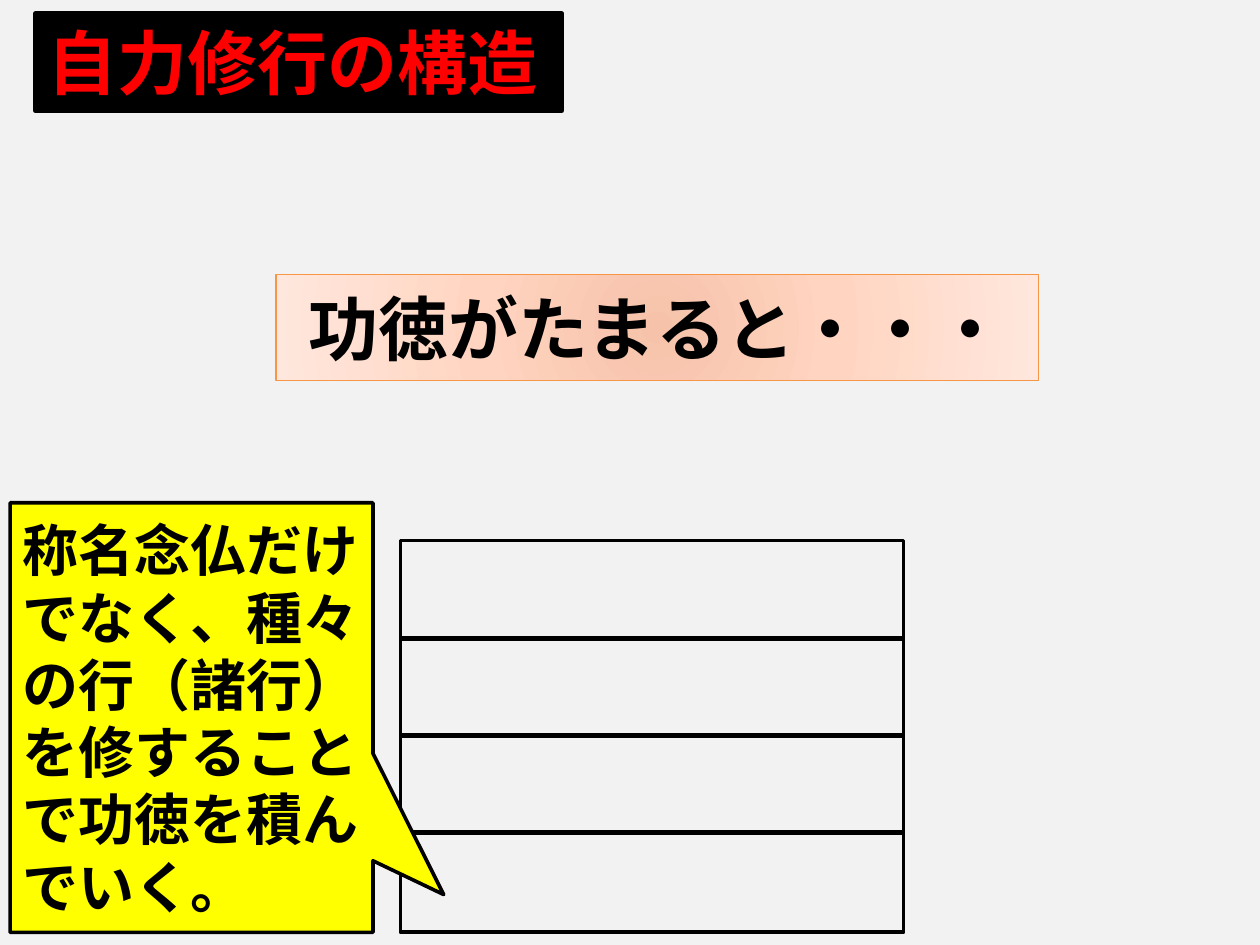
from pptx import Presentation
from pptx.dml.color import RGBColor
from pptx.enum.shapes import MSO_SHAPE
from pptx.enum.text import MSO_ANCHOR, PP_ALIGN
from pptx.oxml import parse_xml
from pptx.oxml.ns import nsdecls, qn
from pptx.util import Inches, Pt
from lxml import etree

RECT, CALLOUT = MSO_SHAPE.RECTANGLE, MSO_SHAPE.RECTANGULAR_CALLOUT
LEFT, CENTER = PP_ALIGN.LEFT, PP_ALIGN.CENTER
TOP, MIDDLE = MSO_ANCHOR.TOP, MSO_ANCHOR.MIDDLE
BLACK = RGBColor(0, 0, 0)
RED = RGBColor(255, 0, 0)
YELLOW = RGBColor(255, 255, 0)
ORANGE = RGBColor(0xF7, 0x96, 0x46)
GRAY = RGBColor(0xF2, 0xF2, 0xF2)
FONT = "Noto Sans CJK JP"

TITLE = "自力修行の構造"
PRACTICE = "称名念仏だけでなく、種々の行（諸行）を修することで功徳を積んでいく。"
MERIT = "功徳がたまると・・・"
MERIT_STOPS = [(0, "F6C2AA"), (45, "FFD4C0"), (100, "FFE7DD")]

STACK_LEFT, STACK_TOP, STACK_WIDTH = 3.18, 4.29, 3.99
LAYERS, LAYER_HEIGHT, LAYER_PITCH = 4, 0.78, 0.77


def add_box(s, shape, box, line, width, fill=None):
    sp = s.shapes.add_shape(shape, *(Inches(v) for v in box))
    sp.shadow.inherit = False
    sp.line.color.rgb = line
    sp.line.width = Pt(width)
    if fill is None:
        sp.fill.background()
    else:
        sp.fill.solid()
        sp.fill.fore_color.rgb = fill
    return sp


def write(sp, text, size, color, align, anchor):
    tf = sp.text_frame
    tf.word_wrap = True
    tf.vertical_anchor = anchor
    p = tf.paragraphs[0]
    p.text = text
    p.alignment = align
    font = p.font
    font.name, font.size, font.bold = FONT, Pt(size), True
    font.color.rgb = color
    props = p._p.pPr.find(qn("a:defRPr"))
    etree.SubElement(props, qn("a:ea")).set("typeface", FONT)


def fill_radial(sp, stops):
    sp.fill.gradient()
    old = sp._element.spPr.find(qn("a:gradFill"))
    gs = "".join(
        f'<a:gs pos="{pos * 1000}"><a:srgbClr val="{color}"/></a:gs>'
        for pos, color in stops
    )
    new = parse_xml(
        f'<a:gradFill {nsdecls("a")}><a:gsLst>{gs}</a:gsLst><a:path path="circle">'
        '<a:fillToRect l="100000" t="100000" r="100000" b="100000"/>'
        "</a:path></a:gradFill>"
    )
    old.getparent().replace(old, new)


def main():
    prs = Presentation()
    prs.slide_width, prs.slide_height = Inches(10), Inches(7.5)
    s = prs.slides.add_slide(prs.slide_layouts[6])
    s.background.fill.solid()
    s.background.fill.fore_color.rgb = GRAY

    for i in range(LAYERS):
        top = STACK_TOP + i * LAYER_PITCH
        height = LAYER_HEIGHT if i < LAYERS - 1 else 0.8
        add_box(s, RECT, (STACK_LEFT, top, STACK_WIDTH, height), BLACK, 2.08)

    title = add_box(s, RECT, (0.28, 0.11, 4.18, 0.77), BLACK, 2.75, BLACK)
    write(title, TITLE, 40, RED, LEFT, TOP)

    practice = add_box(s, CALLOUT, (0.08, 3.99, 2.88, 3.41), BLACK, 2.08, YELLOW)
    practice.adjustments[0] = 0.695
    practice.adjustments[1] = 0.412
    write(practice, PRACTICE, 32, BLACK, LEFT, MIDDLE)

    merit = add_box(s, RECT, (2.19, 2.18, 6.05, 0.84), ORANGE, 0.75)
    fill_radial(merit, MERIT_STOPS)
    write(merit, MERIT, 40, BLACK, CENTER, MIDDLE)

    prs.save("out.pptx")


if __name__ == "__main__":
    main()
